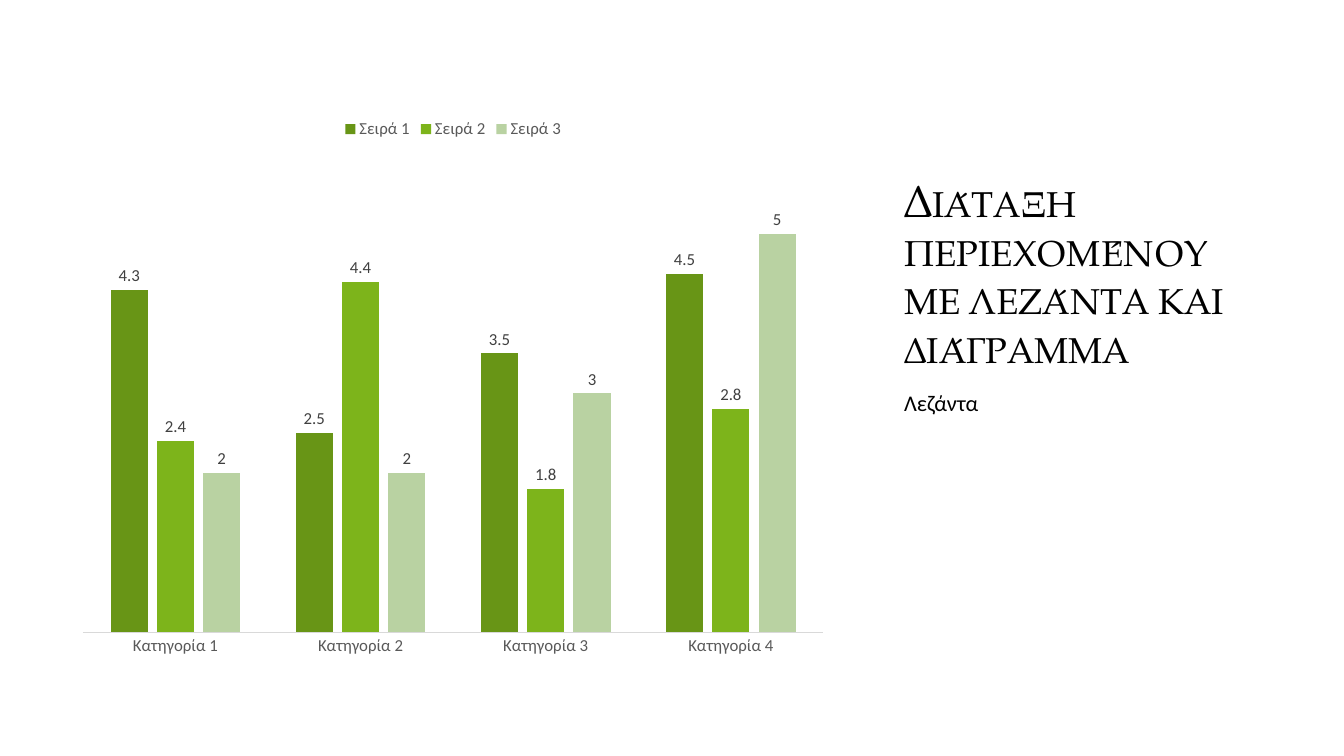
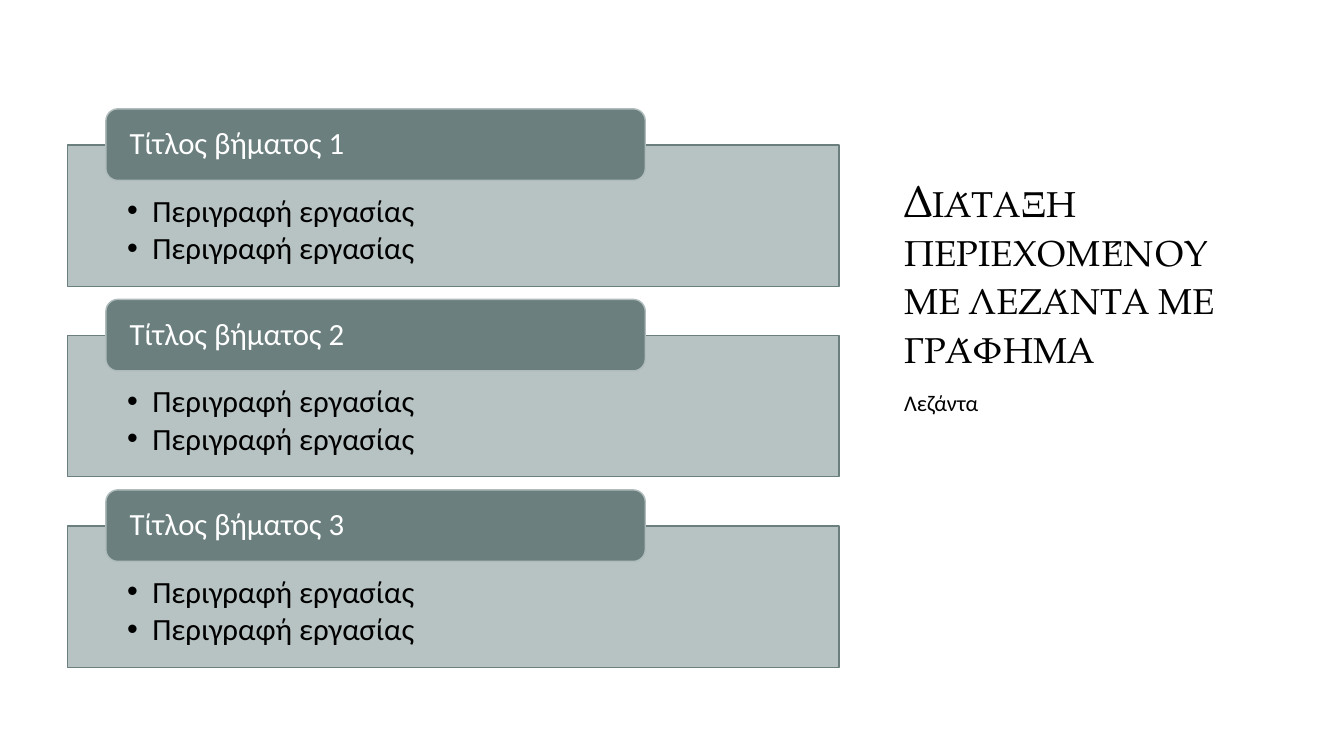
from dataclasses import dataclass

from lxml import etree
from pptx import Presentation
from pptx.chart.data import CategoryChartData
from pptx.dml.color import RGBColor
from pptx.enum.chart import (XL_CHART_TYPE, XL_LABEL_POSITION,
                             XL_LEGEND_POSITION, XL_TICK_MARK)
from pptx.enum.shapes import MSO_SHAPE
from pptx.enum.text import MSO_ANCHOR, MSO_AUTO_SIZE, PP_ALIGN
from pptx.oxml.ns import qn
from pptx.util import Inches, Pt

COLUMNS = XL_CHART_TYPE.COLUMN_CLUSTERED
OUTSIDE = XL_LABEL_POSITION.OUTSIDE_END
TOP_KEY = XL_LEGEND_POSITION.TOP
NO_TICK = XL_TICK_MARK.NONE
RECT, ROUND = MSO_SHAPE.RECTANGLE, MSO_SHAPE.ROUNDED_RECTANGLE
TOP, MIDDLE, BOTTOM = MSO_ANCHOR.TOP, MSO_ANCHOR.MIDDLE, MSO_ANCHOR.BOTTOM
LEFT = PP_ALIGN.LEFT
NO_FIT = MSO_AUTO_SIZE.NONE


@dataclass(frozen=True)
class Theme:
    head_font: str = "TeX Gyre Pagella"
    body_font: str = "Calibri"
    ink: str = "000000"
    white: str = "FFFFFF"
    axis: str = "595959"
    value: str = "404040"
    rule: str = "D9D9D9"
    slate: str = "6B7F7F"
    mist: str = "B0BCBC"
    greens: tuple = ("689516", "7DB41B", "B9D2A2")
    title_size: int = 32
    step_size: int = 22
    caption_size: int = 16
    chart_size: int = 12


THEME = Theme()

CAPTION = "Λεζάντα"
CHART_TITLE = "Διάταξη περιεχομένου με λεζάντα και διάγραμμα"
STEPS_TITLE = "Διάταξη περιεχομένου με λεζάντα με γράφημα"
GROUPS = ["Κατηγορία 1", "Κατηγορία 2", "Κατηγορία 3", "Κατηγορία 4"]
SERIES = [
    ("Σειρά 1", (4.3, 2.5, 3.5, 4.5)),
    ("Σειρά 2", (2.4, 4.4, 1.8, 2.8)),
    ("Σειρά 3", (2, 2, 3, 5)),
]
STEPS = [
    ("Τίτλος βήματος 1", ["Περιγραφή εργασίας", "Περιγραφή εργασίας"]),
    ("Τίτλος βήματος 2", ["Περιγραφή εργασίας", "Περιγραφή εργασίας"]),
    ("Τίτλος βήματος 3", ["Περιγραφή εργασίας", "Περιγραφή εργασίας"]),
]

TITLE_BOX = (8.87, 1.25, 3.8, 2.5)
CAPTION_BOX = (8.87, 3.84, 3.8, 2.3)
CHART_BOX = (0.67, 1.07, 7.65, 5.55)
STEP_LEFT, STEP_TOP, STEP_PITCH = 0.67, 1.44, 1.89
STEP_SIZE = (7.65, 1.4)
TAB_SHIFT, TAB_RISE = 0.38, 0.36
TAB_SIZE = (5.35, 0.71)


def inches(box):
    return [Inches(n) for n in box]


def style(font, size, color, name=THEME.body_font):
    font.size, font.name = Pt(size), name
    font.color.rgb = RGBColor.from_string(color)


def add_bullet(para):
    props = para._p.get_or_add_pPr()
    props.set("marL", str(Inches(0.25)))
    props.set("indent", str(Inches(-0.25)))
    etree.SubElement(props, qn("a:buFont")).set("typeface", "Arial")
    etree.SubElement(props, qn("a:buChar")).set("char", "•")


def write(shape, lines, size, color, anchor=TOP, name=THEME.body_font,
          insets=(0.1, 0.05, 0.1, 0.05), bullets=False, after=0):
    frame = shape.text_frame
    frame.word_wrap, frame.auto_size = True, NO_FIT
    frame.vertical_anchor = anchor
    (frame.margin_left, frame.margin_top,
     frame.margin_right, frame.margin_bottom) = inches(insets)
    frame.text = "\n".join(lines)
    for para in frame.paragraphs:
        para.alignment, para.line_spacing = LEFT, 0.9
        para.space_before, para.space_after = Pt(0), Pt(after)
        if bullets:
            add_bullet(para)
        style(para.font, size, color, name)


def add_slide(deck, title):
    """Add a slide with the shared title and caption on the right."""
    slide = deck.slides.add_slide(deck.slide_layouts[5])
    head = slide.shapes.title
    head.left, head.top, head.width, head.height = inches(TITLE_BOX)
    write(head, [title], THEME.title_size, THEME.ink, BOTTOM, THEME.head_font)
    para = head.text_frame.paragraphs[0]
    para._p.pPr.find(qn("a:defRPr")).set("cap", "small")
    note = slide.shapes.add_textbox(*inches(CAPTION_BOX))
    write(note, [CAPTION], THEME.caption_size, THEME.ink)
    return slide


def add_columns(slide):
    data = CategoryChartData()
    data.categories = GROUPS
    for name, values in SERIES:
        data.add_series(name, values)
    chart = slide.shapes.add_chart(COLUMNS, *inches(CHART_BOX), data).chart
    style(chart.font, THEME.chart_size, THEME.axis)
    chart.has_title = False
    chart.has_legend = True
    chart.legend.position = TOP_KEY
    chart.legend.include_in_layout = False
    style(chart.legend.font, THEME.chart_size, THEME.axis)

    scale = chart.value_axis
    scale.visible = scale.has_major_gridlines = False
    scale.minimum_scale, scale.maximum_scale = 0, 6
    base = chart.category_axis
    base.major_tick_mark = base.minor_tick_mark = NO_TICK
    base.format.line.color.rgb = RGBColor.from_string(THEME.rule)
    base.format.line.width = Pt(0.75)
    style(base.tick_labels.font, THEME.chart_size, THEME.axis)

    plot = chart.plots[0]
    plot.gap_width, plot.overlap = 150, -25
    plot.vary_by_categories = False
    for series, color in zip(plot.series, THEME.greens):
        series.format.fill.solid()
        series.format.fill.fore_color.rgb = RGBColor.from_string(color)
        labels = series.data_labels
        labels.show_value, labels.position = True, OUTSIDE
        style(labels.font, THEME.chart_size, THEME.value)


def add_panel(slide, kind, box, fill, line):
    panel = slide.shapes.add_shape(kind, *inches(box))
    panel.shadow.inherit = False
    panel.fill.solid()
    panel.fill.fore_color.rgb = RGBColor.from_string(fill)
    panel.line.color.rgb = RGBColor.from_string(line)
    panel.line.width = Pt(1)
    return panel


def add_steps(slide):
    for i, (name, tasks) in enumerate(STEPS):
        top = STEP_TOP + i * STEP_PITCH
        body = add_panel(slide, RECT, (STEP_LEFT, top, *STEP_SIZE),
                         THEME.mist, THEME.slate)
        color = body.fill._xPr.find(qn("a:solidFill"))[0]
        etree.SubElement(color, qn("a:alpha")).set("val", "90000")
        write(body, tasks, THEME.step_size, THEME.ink,
              insets=(0.59, 0.5, 0.59, 0.17), bullets=True, after=3)
        tab = add_panel(slide, ROUND,
                        (STEP_LEFT + TAB_SHIFT, top - TAB_RISE, *TAB_SIZE),
                        THEME.slate, THEME.mist)
        write(tab, [name], THEME.step_size, THEME.white, MIDDLE,
              insets=(0.2, 0, 0.2, 0))


def main():
    deck = Presentation()
    deck.slide_width, deck.slide_height = Inches(13.33), Inches(7.5)
    add_columns(add_slide(deck, CHART_TITLE))
    add_steps(add_slide(deck, STEPS_TITLE))
    deck.save("out.pptx")


if __name__ == "__main__":
    main()
